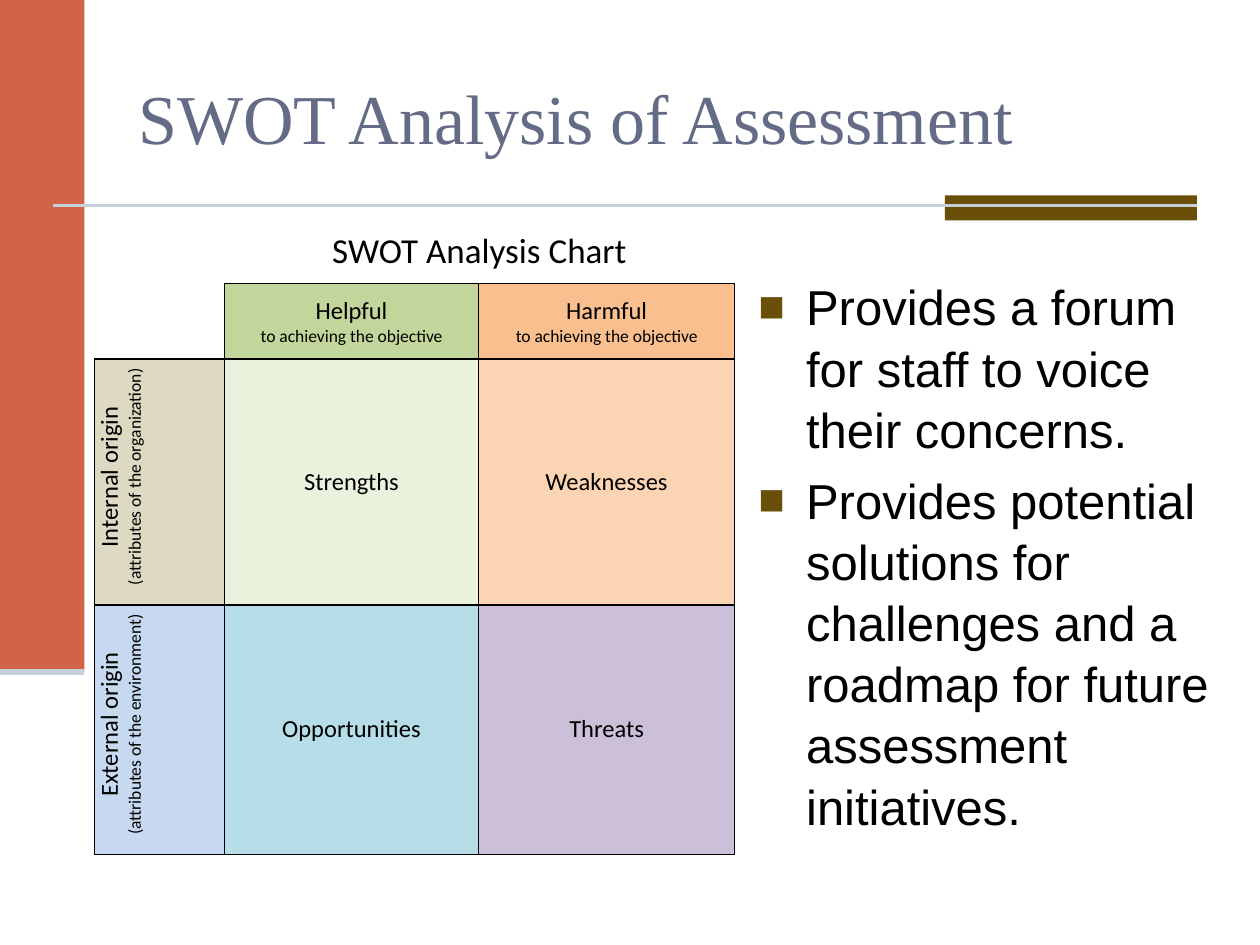
from dataclasses import dataclass

from lxml.etree import SubElement
from pptx import Presentation
from pptx.dml.color import RGBColor
from pptx.enum.shapes import MSO_CONNECTOR as Connector, MSO_SHAPE as Shape
from pptx.enum.text import MSO_ANCHOR as Anchor, PP_ALIGN as Align
from pptx.oxml.ns import qn
from pptx.util import Inches, Pt


@dataclass(frozen=True)
class Theme:
    title_font: str = "Times New Roman"
    body_font: str = "Arial"
    table_font: str = "Calibri"
    title_size: int = 40
    body_size: int = 28
    caption_size: int = 20
    label_size: int = 14
    detail_size: int = 10
    title: str = "646B86"
    text: str = "000000"
    sidebar: str = "D16349"
    accent: str = "694F07"
    rule: str = "C5D1D7"
    white: str = "FFFFFF"
    helpful: str = "C2D69B"
    harmful: str = "FABF8F"
    internal: str = "DDD9C3"
    external: str = "C6D9F1"
    strengths: str = "EAF1DD"
    weaknesses: str = "FBD4B4"
    opportunities: str = "B6DDE8"
    threats: str = "CCC0D9"


THEME = Theme()
ALL_SIDES = "LRTB"


def add_run(paragraph, text, font, size, color):
    run = paragraph.add_run()
    run.text = text
    run.font.name = font
    run.font.size = Pt(size)
    run.font.color.rgb = RGBColor.from_string(color)


def add_block(slide, left, top, width, height, color):
    block = slide.shapes.add_shape(
        Shape.RECTANGLE, Inches(left), Inches(top), Inches(width), Inches(height))
    block.shadow.inherit = False
    block.fill.solid()
    block.fill.fore_color.rgb = RGBColor.from_string(color)
    block.line.fill.background()


def add_rule(slide, left, right, y, weight):
    rule = slide.shapes.add_connector(
        Connector.STRAIGHT, Inches(left), Inches(y), Inches(right), Inches(y))
    rule.line.color.rgb = RGBColor.from_string(THEME.rule)
    rule.line.width = Pt(weight)
    SubElement(rule._element.spPr, qn("a:effectLst"))


def add_text_frame(slide, left, top, width, height):
    box = slide.shapes.add_textbox(
        Inches(left), Inches(top), Inches(width), Inches(height))
    box.text_frame.word_wrap = True
    return box.text_frame


def add_title(slide, text):
    frame = add_text_frame(slide, 1, 0.3, 8.5, 1.25)
    frame.vertical_anchor = Anchor.MIDDLE
    add_run(frame.paragraphs[0], text, THEME.title_font, THEME.title_size, THEME.title)


def set_square_bullet(paragraph):
    properties = paragraph._p.get_or_add_pPr()
    properties.set("marL", str(Inches(0.38)))
    properties.set("indent", str(Inches(-0.38)))
    color = SubElement(properties, qn("a:buClr"))
    SubElement(color, qn("a:srgbClr"), val=THEME.accent)
    SubElement(properties, qn("a:buSzPct"), val="90000")
    SubElement(properties, qn("a:buFont"), typeface=THEME.body_font)
    SubElement(properties, qn("a:buChar"), char="■")


def add_bullets(slide, items):
    frame = add_text_frame(slide, 5.92, 2.13, 3.83, 4.95)
    for index, item in enumerate(items):
        paragraph = frame.add_paragraph() if index else frame.paragraphs[0]
        paragraph.space_before = Pt(0.2 * THEME.body_size)
        paragraph.line_spacing = 1.04
        set_square_bullet(paragraph)
        add_run(paragraph, item, THEME.body_font, THEME.body_size, THEME.text)


def set_borders(cell, sides):
    """Draw the named sides (of L, R, T, B) and hide the others."""
    properties = cell._tc.get_or_add_tcPr()
    for side in ALL_SIDES:
        border = SubElement(properties, qn(f"a:ln{side}"), w=str(Pt(1)))
        if side in sides:
            fill = SubElement(border, qn("a:solidFill"))
            SubElement(fill, qn("a:srgbClr"), val=THEME.text)
        else:
            SubElement(border, qn("a:noFill"))


def style_cell(cell, color, sides=ALL_SIDES):
    set_borders(cell, sides)
    if color is None:
        cell.fill.background()
    else:
        cell.fill.solid()
        cell.fill.fore_color.rgb = RGBColor.from_string(color)


def write_cell(cell, lines, rotated=False):
    """Write centred (text, size) lines, reading upwards if rotated."""
    cell.vertical_anchor = Anchor.MIDDLE
    cell.margin_left = cell.margin_right = Inches(0.07)
    cell.margin_top = cell.margin_bottom = 0
    if rotated:
        cell._tc.get_or_add_tcPr().set("vert", "vert270")
    for index, (text, size) in enumerate(lines):
        frame = cell.text_frame
        paragraph = frame.add_paragraph() if index else frame.paragraphs[0]
        paragraph.alignment = Align.CENTER
        if rotated:
            paragraph._p.get_or_add_pPr().set("marL", str(Inches(0.08)))
        add_run(paragraph, text, THEME.table_font, size, THEME.text)


def add_swot_table(slide):
    widths, heights = (1.03, 2.02, 2.03), (0.5, 0.6, 1.95, 1.98)
    table = slide.shapes.add_table(
        len(heights), len(widths), Inches(0.75), Inches(1.75),
        Inches(sum(widths)), Inches(sum(heights))).table
    table.first_row = table.horz_banding = False
    for column, width in zip(table.columns, widths):
        column.width = Inches(width)
    for row, height in zip(table.rows, heights):
        row.height = Inches(height)

    style_cell(table.cell(0, 0), THEME.white, "")
    style_cell(table.cell(1, 0), None, "RB")
    for column in (1, 2):
        style_cell(table.cell(0, column), THEME.white, "B")
    caption = table.cell(0, 1)
    caption.merge(table.cell(0, 2))
    write_cell(caption, [("SWOT Analysis Chart", THEME.caption_size)])

    objective = "to achieving the objective"
    cells = {
        (1, 1): (THEME.helpful, "Helpful", objective),
        (1, 2): (THEME.harmful, "Harmful", objective),
        (2, 0): (THEME.internal, "Internal origin", "(attributes of the organization)"),
        (2, 1): (THEME.strengths, "Strengths"),
        (2, 2): (THEME.weaknesses, "Weaknesses"),
        (3, 0): (THEME.external, "External origin", "(attributes of the environment)"),
        (3, 1): (THEME.opportunities, "Opportunities"),
        (3, 2): (THEME.threats, "Threats"),
    }
    for (row, column), (color, *texts) in cells.items():
        cell = table.cell(row, column)
        style_cell(cell, color)
        sizes = (THEME.label_size, THEME.detail_size)
        write_cell(cell, zip(texts, sizes), rotated=column == 0)


def main():
    presentation = Presentation()
    presentation.slide_width, presentation.slide_height = Inches(10), Inches(7.5)
    slide = presentation.slides.add_slide(presentation.slide_layouts[6])
    add_block(slide, 0, 0, 0.67, 5.33, THEME.sidebar)
    add_block(slide, 7.5, 1.55, 2, 0.2, THEME.accent)
    add_rule(slide, 0.42, 9.5, 1.63, 1.5)
    add_rule(slide, 0, 0.67, 5.33, 3.5)
    add_title(slide, "SWOT Analysis of Assessment")
    add_swot_table(slide)
    add_bullets(slide, [
        "Provides a forum for staff to voice their concerns.",
        "Provides potential solutions for challenges and a roadmap for future "
        "assessment initiatives.",
    ])
    presentation.save("out.pptx")


if __name__ == "__main__":
    main()
